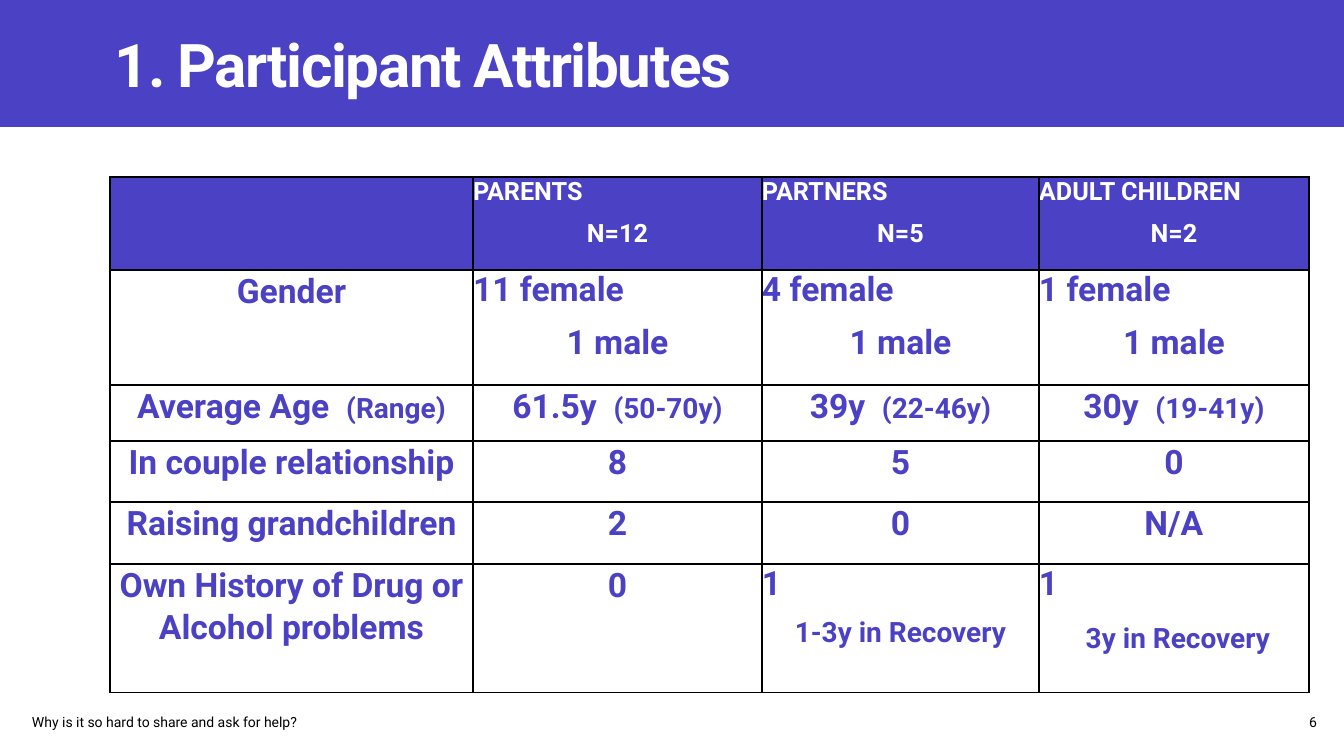
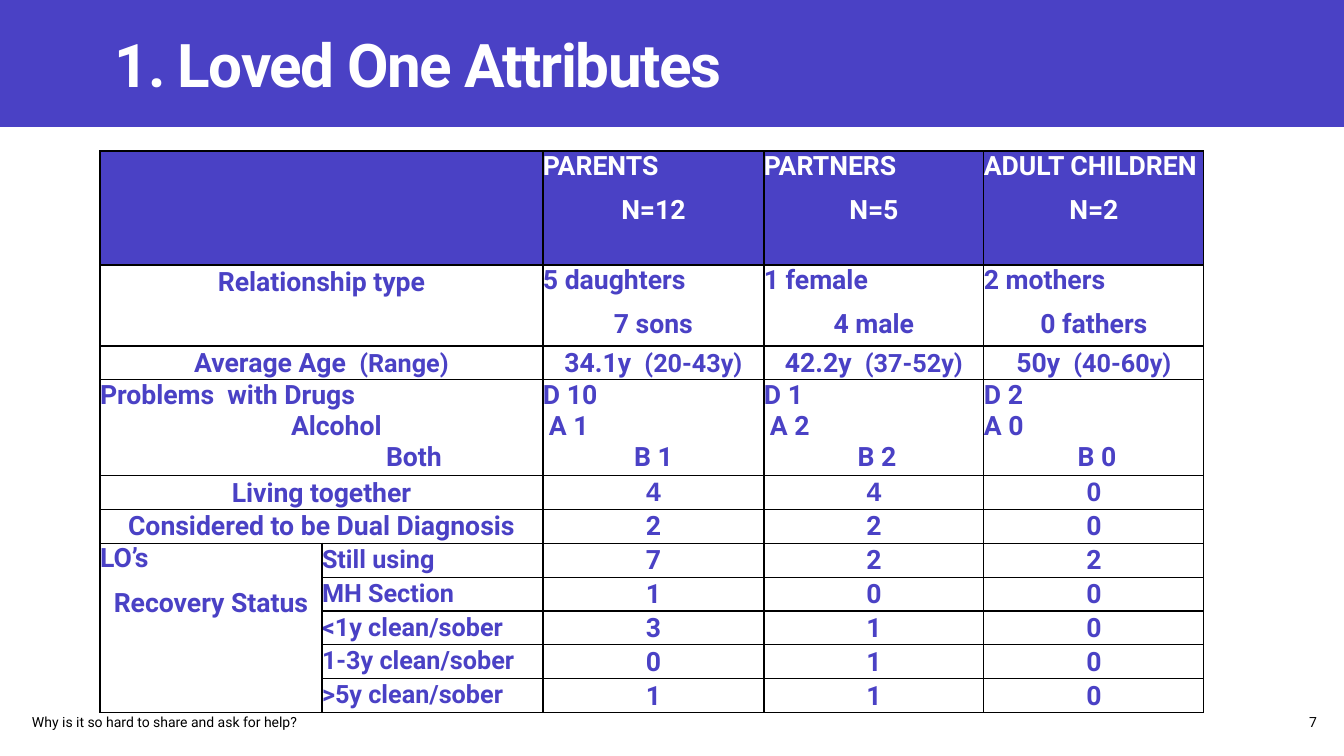
from dataclasses import dataclass

from lxml.etree import SubElement
from pptx import Presentation
from pptx.dml.color import RGBColor
from pptx.enum.shapes import MSO_SHAPE
from pptx.enum.text import MSO_ANCHOR, PP_ALIGN
from pptx.oxml.ns import qn
from pptx.util import Emu, Pt

SCALE = 12192000 / 1344
VIOLET = RGBColor(0x4A, 0x41, 0xC5)
WHITE = RGBColor(0xFF, 0xFF, 0xFF)
BLACK = RGBColor(0x00, 0x00, 0x00)
FONT = "Roboto"
FOOTER = "Why is it so hard to share and ask for help?"
TITLE_FORMAT = {"name": FONT, "size": Pt(43), "bold": True}
FOOTER_FORMAT = {"name": FONT, "size": Pt(10)}
INSETS = ("margin_left", "margin_top", "margin_right", "margin_bottom")


@dataclass
class Line:
    """One paragraph of a table cell, with an optional smaller run."""

    text: str = ""
    small: str = ""
    align: PP_ALIGN = PP_ALIGN.CENTER
    indent: int = 0
    before: int = 0
    spacing: float = 1.06
    font: str = FONT


@dataclass
class TableLook:
    """Text sizes of one table."""

    header: int
    body: int
    small: int


def px(length):
    """Turn pixels into EMU."""
    return Emu(round(length * SCALE))


def apply_format(target, values):
    """Set attributes from a dict of format values."""
    for name, value in values.items():
        setattr(target, name, value)


def left(text="", small="", indent=0, spacing=1.0):
    """Return a line that starts at the left edge."""
    return Line(text, small, PP_ALIGN.LEFT, indent, spacing=spacing)


def stacked(first, second="", small="", indent=0, before=8):
    """Return a left line above a centred one."""
    return [left(first), Line(second, small, indent=indent, before=before)]


def substances(drugs, alcohol, both, alcohol_indent=6, both_indent=6):
    """Return the three counts of the substance row."""
    return [left(drugs), left(alcohol, indent=alcohol_indent),
            Line(both, indent=both_indent, spacing=1.0)]


def ranges(*pairs):
    """Return one cell for each value and its range."""
    return [[Line(f"{value}  ", f"({span})")] for value, span in pairs]


def counts(text, font=FONT):
    """Return one centred cell for each word."""
    return [[Line(word, font=font)] for word in text.split()]


def group_headers():
    """Return the header cells of the three groups."""
    groups = (("PARENTS", 12), ("PARTNERS", 5), ("ADULT CHILDREN", 2))
    return [stacked(name, f"N={size}") for name, size in groups]


def add_band(slide):
    """Add the coloured band behind the title."""
    band = slide.shapes.add_shape(MSO_SHAPE.RECTANGLE, 0, 0, px(1344), px(127))
    band.shadow.inherit = False
    band.fill.solid()
    band.fill.fore_color.rgb = VIOLET
    band.line.fill.background()


def add_label(slide, text, box, font, color, align=PP_ALIGN.LEFT):
    """Add a one-line text box and return its run."""
    shape = slide.shapes.add_textbox(*map(px, box))
    frame = shape.text_frame
    apply_format(frame, {"word_wrap": True, "vertical_anchor": MSO_ANCHOR.MIDDLE})
    apply_format(frame, dict.fromkeys(INSETS, px(5)))
    paragraph = frame.paragraphs[0]
    paragraph.alignment = align
    run = paragraph.add_run()
    run.text = text
    apply_format(run.font, font)
    run.font.color.rgb = color
    return run


def add_base_slide(presentation, title, number):
    """Add a slide with band, title and footer."""
    slide = presentation.slides.add_slide(presentation.slide_layouts[6])
    add_band(slide)
    run = add_label(slide, title, (110, 21, 1105, 84), TITLE_FORMAT, WHITE)
    run.font._element.set("spc", "-100")
    add_label(slide, FOOTER, (27, 708, 523, 27), FOOTER_FORMAT, BLACK)
    add_label(slide, str(number), (1303, 708, 19, 27), FOOTER_FORMAT, BLACK,
              PP_ALIGN.RIGHT)
    return slide


def add_borders(cell):
    """Draw a thin black line on each side of a cell."""
    properties = cell._tc.get_or_add_tcPr()
    for side in ("a:lnL", "a:lnR", "a:lnT", "a:lnB"):
        line = SubElement(properties, qn(side), w=str(Pt(1)))
        fill = SubElement(line, qn("a:solidFill"))
        SubElement(fill, qn("a:srgbClr"), val=str(BLACK))


def write_lines(cell, lines, size, small_size, color):
    """Write the paragraphs of a cell."""
    for index, line in enumerate(lines):
        frame = cell.text_frame
        paragraph = frame.add_paragraph() if index else frame.paragraphs[0]
        apply_format(paragraph, {"alignment": line.align,
                                 "line_spacing": line.spacing,
                                 "space_before": Pt(line.before)})
        if line.indent:
            paragraph._p.get_or_add_pPr().set("marL", str(px(line.indent)))
        for text, points in ((line.text, size), (line.small, small_size)):
            if text:
                run = paragraph.add_run()
                run.text = text
                apply_format(run.font, {"name": line.font, "size": Pt(points),
                                        "bold": True})
                run.font.color.rgb = color


def add_grid(slide, origin, widths, heights, rows, look, merges=()):
    """Add a bordered table with a coloured header row."""
    graphic = slide.shapes.add_table(
        len(heights), len(widths), *map(px, (*origin, sum(widths), sum(heights))))
    table = graphic.table
    apply_format(table, {"first_row": False, "horz_banding": False})
    for column, width in zip(table.columns, widths):
        column.width = px(width)
    for row, height in zip(table.rows, heights):
        row.height = px(height)
    for first, last in merges:
        table.cell(*first).merge(table.cell(*last))
    for row_index, row in enumerate(rows):
        is_header = row_index == 0
        size = look.header if is_header else look.body
        for column_index, lines in enumerate(row):
            cell = table.cell(row_index, column_index)
            apply_format(cell, dict.fromkeys(INSETS, 0))
            add_borders(cell)
            cell.fill.solid()
            cell.fill.fore_color.rgb = VIOLET if is_header else WHITE
            write_lines(cell, lines, size, look.small,
                        WHITE if is_header else VIOLET)


def add_participants(presentation):
    """Add the slide on the participants."""
    slide = add_base_slide(presentation, "1. Participant Attributes", 6)
    rows = [
        [[], *group_headers()],
        [[Line("Gender")], stacked("11 female", "1 male"),
         stacked("4 female", "1 male"), stacked("1 female", "1 male")],
        ranges(("Average Age", "Range"), ("61.5y", "50-70y"),
               ("39y", "22-46y"), ("30y", "19-41y")),
        [[Line("In couple relationship")], *counts("8 5 0")],
        [[Line("Raising grandchildren")], *counts("2 0 N/A")],
        [[Line("Own History of Drug or Alcohol problems")], *counts("0"),
         stacked("1", small="1-3y in Recovery"),
         stacked("1", small="3y in Recovery", indent=8, before=12)],
    ]
    add_grid(slide, (110, 177), (363, 289, 277, 270),
             (93, 115, 56, 61, 62, 129), rows, TableLook(18, 24, 20))


def add_loved_ones(presentation):
    """Add the slide on the loved ones."""
    slide = add_base_slide(presentation, "1. Loved One Attributes", 7)
    age_label, *ages = ranges(("Average Age", "Range"), ("34.1y", "20-43y"),
                              ("42.2y", "37-52y"), ("50y", "40-60y"))
    problems = [left("Problems  with Drugs"), left("Alcohol", indent=191),
                left("Both", indent=286)]
    rows = [
        [[], [], *group_headers()],
        [[Line("Relationship type")], [], stacked("5 daughters", "7 sons"),
         stacked("1 female", "4 male"), stacked("2 mothers", "0 fathers")],
        [age_label, [], *ages],
        [problems, [], substances("D 10", "A 1", "B 1", both_indent=0),
         substances("D 1", "A 2", "B 2"),
         substances("D 2", "A 0", "B 0", alcohol_indent=0)],
        [[Line("Living together")], [], *counts("4 4 0", "Arial")],
        [[Line("Considered to be Dual Diagnosis")], [], *counts("2 2 0")],
    ]
    statuses = (("Still using", "7 2 2"), ("MH Section", "1 0 0"),
                ("<1y clean/sober", "3 1 0"), ("1-3y clean/sober", "0 1 0"),
                (">5y clean/sober", "1 1 0"))
    first_status = len(rows)
    for status, values in statuses:
        rows.append([[], [left(small=status, spacing=1.06)], *counts(values)])
    rows[first_status][0] = stacked("LO’s", "Recovery Status")
    merges = [((row, 0), (row, 1)) for row in range(first_status)]
    merges.append(((first_status, 0), (len(rows) - 1, 0)))
    add_grid(slide, (100, 151), (222, 221, 221, 220, 220),
             (114, 81, 33, 94, *[33] * 7), rows, TableLook(19, 19, 18), merges)


def main():
    """Build and save the presentation."""
    presentation = Presentation()
    apply_format(presentation, {"slide_width": px(1344), "slide_height": px(756)})
    add_participants(presentation)
    add_loved_ones(presentation)
    presentation.save("out.pptx")


if __name__ == "__main__":
    main()
